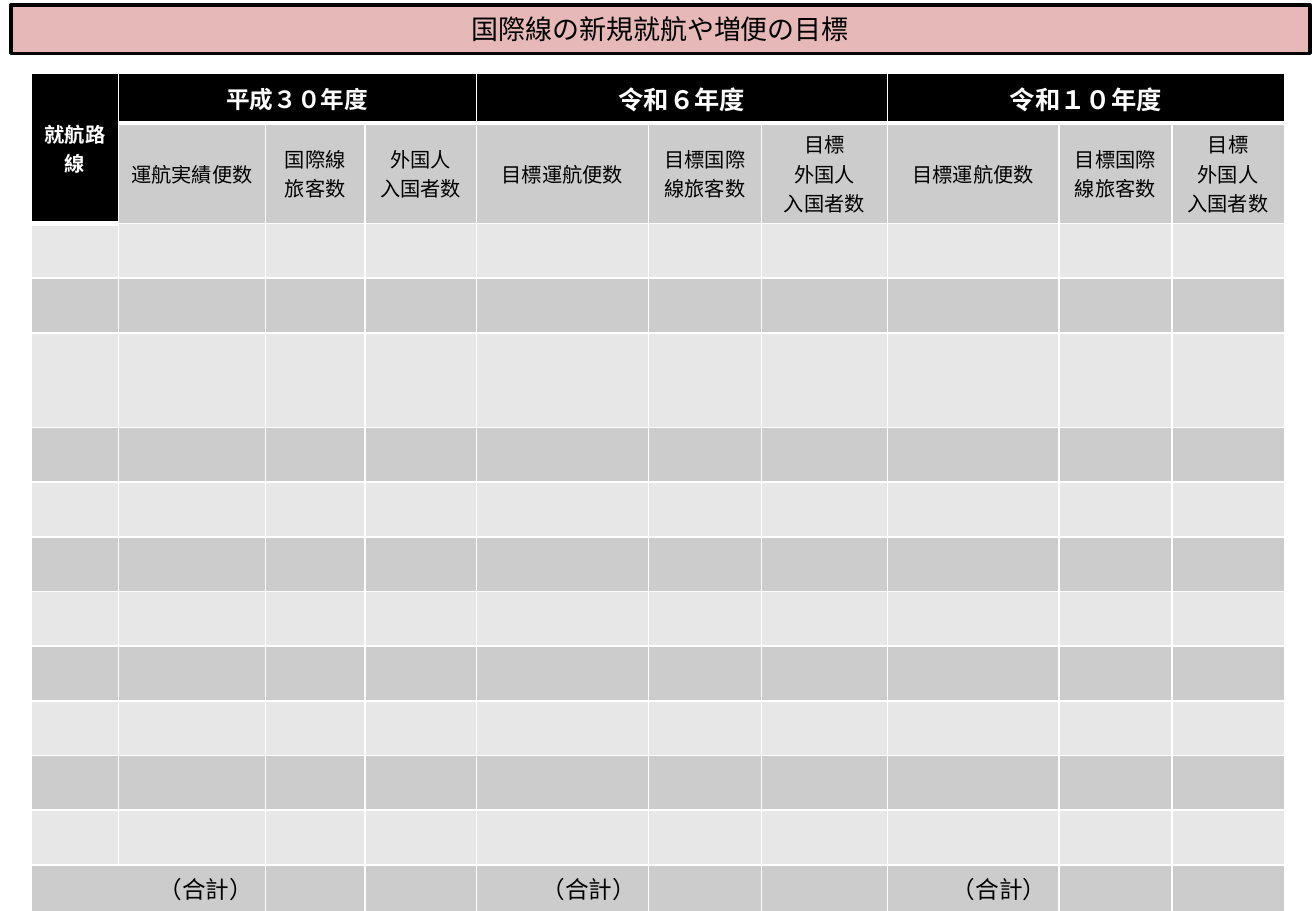
from dataclasses import dataclass

from lxml.etree import SubElement
from pptx import Presentation
from pptx.dml.color import RGBColor as Color
from pptx.enum.shapes import MSO_SHAPE as Shape
from pptx.enum.text import MSO_ANCHOR as Anchor, PP_ALIGN as Align
from pptx.oxml.ns import qn
from pptx.slide import Slide
from pptx.table import Table, _Cell as Cell
from pptx.text.text import TextFrame
from pptx.util import Emu, Inches, Pt

COLORS = {
    "black": "000000",
    "white": "FFFFFF",
    "pink": "E6B9B8",
    "dark_band": "CCCCCC",
    "light_band": "E7E7E7",
}
SLIDE_WIDTH, SLIDE_HEIGHT = Inches(10.83), Inches(7.5)
COLUMN_SHARES = [6.6, 11.18, 7.57, 8.45, 13.08, 8.59, 9.58, 13.02, 8.59, 8.55]
ROW_SHARES = [5.47, 10.93, 6, 6, 10.4] + [6] * 9
TABLE_LEFT, TABLE_TOP = 2.4, 8.05
HEADER_ROWS = 2
TOTAL_ROW = len(ROW_SHARES) - 1
ASIAN_FONT = "Noto Sans CJK JP"


@dataclass(frozen=True)
class TextStyle:
    size: float
    color: str = "black"
    bold: bool = False
    align: Align = Align.CENTER
    font: str = "Calibri"


@dataclass(frozen=True)
class Entry:
    row: int
    column: int
    lines: tuple[str, ...]
    style: TextStyle
    row_span: int = 1
    column_span: int = 1


@dataclass(frozen=True)
class Period:
    column: int
    title: str
    size: float
    measures: tuple[tuple[str, ...], ...]


TARGETS = (("目標運航便数",), ("目標国際線旅客数",), ("目標", "外国人", "入国者数"))
RESULTS = (("運航実績便数",), ("国際線旅客数",), ("外国人", "入国者数"))
PERIODS = [
    Period(1, "平成３０年度", 14, RESULTS),
    Period(4, "令和６年度", 15, TARGETS),
    Period(7, "令和１０年度", 15, TARGETS),
]
MEASURE_STYLE = TextStyle(12)
TOTAL_STYLE = TextStyle(14, align=Align.RIGHT)


def color(name: str) -> Color:
    return Color.from_string(COLORS[name])


def across(share: float) -> Emu:
    return Emu(round(SLIDE_WIDTH * share / 100))


def down(share: float) -> Emu:
    return Emu(round(SLIDE_HEIGHT * share / 100))


def write(frame: TextFrame, lines: tuple[str, ...], style: TextStyle) -> None:
    for index, line in enumerate(lines):
        para = frame.add_paragraph() if index else frame.paragraphs[0]
        para.alignment = style.align
        span = para.add_run()
        span.text = line
        span.font.name = style.font
        span.font.size = Pt(style.size)
        span.font.bold = style.bold
        span.font.color.rgb = color(style.color)
        SubElement(span.font._element, qn("a:ea"), typeface=ASIAN_FONT)


def draw_title(page: Slide) -> None:
    box = page.shapes.add_shape(
        Shape.RECTANGLE, across(0.83), down(0.53), across(98.71), down(5.33)
    )
    box.shadow.inherit = False
    box.fill.solid()
    box.fill.fore_color.rgb = color("pink")
    box.line.color.rgb = color("black")
    box.line.width = Pt(2)
    box.text_frame.vertical_anchor = Anchor.MIDDLE
    write(box.text_frame, ("国際線の新規就航や増便の目標",), TextStyle(16, font=ASIAN_FONT))


def set_borders(cell: Cell, thick_sides: str) -> None:
    properties = cell._tc.get_or_add_tcPr()
    for position, side in enumerate("LRTB"):
        width = Pt(3 if side in thick_sides else 1)
        line = properties.makeelement(qn(f"a:ln{side}"), {"w": str(width)})
        fill = SubElement(line, qn("a:solidFill"))
        SubElement(fill, qn("a:srgbClr"), val=COLORS["white"])
        properties.insert(position, line)


def header_depth(column: int) -> int:
    return HEADER_ROWS if column == 0 else 1


def paint_cell(cell: Cell, row: int, column: int) -> None:
    depth = header_depth(column)
    band = "light_band" if row % 2 == 0 else "dark_band"
    if row < depth:
        band = "black"
    elif row == TOTAL_ROW:
        band = "dark_band"
    cell.fill.solid()
    cell.fill.fore_color.rgb = color(band)
    thick_sides = "B" if row < depth else "T" if row == depth else ""
    set_borders(cell, thick_sides)
    if row < HEADER_ROWS:
        cell.vertical_anchor = Anchor.MIDDLE


def table_entries() -> list[Entry]:
    route_style = TextStyle(12, "white", True)
    entries = [Entry(0, 0, ("就航路線",), route_style, row_span=HEADER_ROWS)]
    for period in PERIODS:
        heading = TextStyle(period.size, "white", True)
        entries.append(Entry(0, period.column, (period.title,), heading, column_span=3))
        for offset, lines in enumerate(period.measures):
            entries.append(Entry(1, period.column + offset, lines, MEASURE_STYLE))
        first = period.column == 1
        entries.append(Entry(
            TOTAL_ROW, 0 if first else period.column, ("（合計）",),
            TOTAL_STYLE, column_span=2 if first else 1,
        ))
    return entries


def place_entry(table: Table, entry: Entry) -> None:
    cell = table.cell(entry.row, entry.column)
    if entry.row_span * entry.column_span > 1:
        cell.merge(table.cell(
            entry.row + entry.row_span - 1, entry.column + entry.column_span - 1
        ))
    write(cell.text_frame, entry.lines, entry.style)


def draw_table(page: Slide) -> None:
    table = page.shapes.add_table(
        len(ROW_SHARES), len(COLUMN_SHARES), across(TABLE_LEFT), down(TABLE_TOP),
        across(sum(COLUMN_SHARES)), down(sum(ROW_SHARES)),
    ).table
    table.first_row = table.horz_banding = False
    for column, share in zip(table.columns, COLUMN_SHARES):
        column.width = across(share)
    for row, share in zip(table.rows, ROW_SHARES):
        row.height = down(share)
    for row in range(len(ROW_SHARES)):
        for column in range(len(COLUMN_SHARES)):
            paint_cell(table.cell(row, column), row, column)
    for entry in table_entries():
        place_entry(table, entry)


def main() -> None:
    """Build the slide of targets for new and added international flights."""
    deck = Presentation()
    deck.slide_width, deck.slide_height = SLIDE_WIDTH, SLIDE_HEIGHT
    page = deck.slides.add_slide(deck.slide_layouts[6])
    draw_title(page)
    draw_table(page)
    deck.save("out.pptx")


if __name__ == "__main__":
    main()
